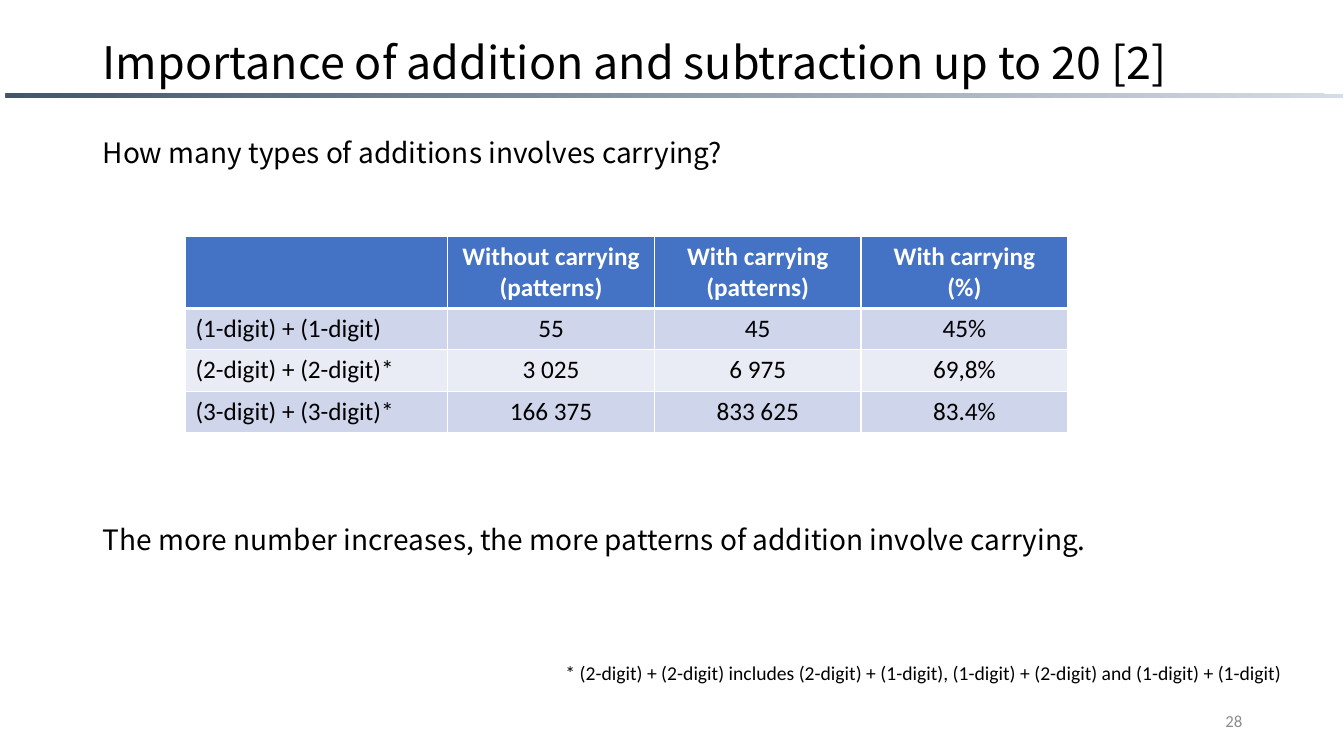
from dataclasses import dataclass

from lxml import etree
from pptx import Presentation
from pptx.dml.color import RGBColor
from pptx.enum.shapes import MSO_SHAPE
from pptx.enum.text import MSO_ANCHOR, MSO_AUTO_SIZE, PP_ALIGN
from pptx.oxml.ns import qn
from pptx.slide import Slide
from pptx.table import _Cell
from pptx.text.text import TextFrame
from pptx.util import Emu, Pt

RECTANGLE = MSO_SHAPE.RECTANGLE
LEFT, CENTER, RIGHT = PP_ALIGN.LEFT, PP_ALIGN.CENTER, PP_ALIGN.RIGHT
TOP, MIDDLE = MSO_ANCHOR.TOP, MSO_ANCHOR.MIDDLE
NO_AUTOFIT = MSO_AUTO_SIZE.NONE
EMU_PER_PX = 9144  # 100 px to the inch
TITLE_ONLY = 5


@dataclass(frozen=True)
class Theme:
    text: str = "000000"
    white: str = "FFFFFF"
    page_number: str = "8C8C8C"
    bar_light: str = "D6DCE5"
    bar_dark: str = "44546A"
    header: str = "4472C4"
    bands: tuple[str, str] = ("CFD5EA", "E9EBF5")
    heading_font: str = "Noto Sans CJK JP"
    table_font: str = "Calibri"
    title_size: int = 32
    body_size: int = 20
    table_size: int = 18
    note_size: int = 14
    number_size: int = 12


THEME = Theme()


@dataclass(frozen=True)
class Box:
    left: int
    top: int
    width: int
    height: int

    def emu(self) -> tuple[Emu, Emu, Emu, Emu]:
        return px(self.left), px(self.top), px(self.width), px(self.height)


@dataclass(frozen=True)
class TextBlock:
    box: Box
    text: str
    size: int
    font: str
    color: str = THEME.text
    align: PP_ALIGN = LEFT
    anchor: MSO_ANCHOR = TOP
    line_spacing: float = 1.5
    space_before: int = 10


TITLE = "Importance of addition and subtraction up to 20 [2]"
TITLE_BOX = Box(92, 40, 1150, 49)
BAR_BOX = Box(6, 93, 1326, 4)
TEXT_BLOCKS = (
    TextBlock(Box(92, 113, 1150, 60), "How many types of additions involves carrying?",
              THEME.body_size, THEME.heading_font),
    TextBlock(Box(92, 497, 1150, 60),
              "The more number increases, the more patterns of addition involve carrying.",
              THEME.body_size, THEME.heading_font),
    TextBlock(Box(551, 639, 739, 42),
              "* (2-digit) + (2-digit) includes (2-digit) + (1-digit), "
              "(1-digit) + (2-digit) and (1-digit) + (1-digit)",
              THEME.note_size, THEME.table_font),
    TextBlock(Box(942, 695, 300, 40), "28", THEME.number_size, THEME.table_font,
              THEME.page_number, RIGHT, MIDDLE, 1.0, 0),
)

TABLE_BOX = Box(184, 235, 874, 192)
COLUMN_WIDTHS = (260, 205, 205, 205)
ROW_HEIGHTS = (69, 41, 41, 41)
TABLE_ROWS = (
    ("", "Without carrying\n(patterns)", "With carrying\n(patterns)", "With carrying\n(%)"),
    ("(1-digit) + (1-digit)", "55", "45", "45%"),
    ("(2-digit) + (2-digit)*", "3 025", "6 975", "69,8%"),
    ("(3-digit) + (3-digit)*", "166 375", "833 625", "83.4%"),
)


def px(length: int) -> Emu:
    return Emu(length * EMU_PER_PX)


def rgb(color: str) -> RGBColor:
    return RGBColor.from_string(color)


def write_text(frame: TextFrame, text: str, *, size: int, font: str,
               color: str = THEME.text, align: PP_ALIGN = LEFT, bold: bool = False,
               line_spacing: float = 1.0, space_before: int = 0) -> None:
    """Fill the frame, one paragraph for each line of text."""
    frame.text = text
    for paragraph in frame.paragraphs:
        paragraph.alignment = align
        paragraph.line_spacing = line_spacing
        paragraph.space_before = Pt(space_before)
        for run in paragraph.runs:
            run.font.size = Pt(size)
            run.font.name = font
            run.font.bold = bold
            run.font.color.rgb = rgb(color)


def add_title(slide: Slide) -> None:
    title = slide.shapes.title
    title.left, title.top, title.width, title.height = TITLE_BOX.emu()
    frame = title.text_frame
    frame.auto_size = NO_AUTOFIT
    frame.vertical_anchor = MIDDLE
    write_text(frame, TITLE, size=THEME.title_size, font=THEME.heading_font,
               line_spacing=0.9)


def add_title_bar(slide: Slide) -> None:
    bar = slide.shapes.add_shape(RECTANGLE, *BAR_BOX.emu())
    bar.shadow.inherit = False
    bar.line.fill.background()
    bar.fill.gradient()
    bar.fill.gradient_angle = 230
    for stop, color in zip(bar.fill.gradient_stops, (THEME.bar_light, THEME.bar_dark)):
        stop.color.rgb = rgb(color)


def add_text_block(slide: Slide, block: TextBlock) -> None:
    frame = slide.shapes.add_textbox(*block.box.emu()).text_frame
    frame.word_wrap = True
    frame.vertical_anchor = block.anchor
    write_text(frame, block.text, size=block.size, font=block.font, color=block.color,
               align=block.align, line_spacing=block.line_spacing,
               space_before=block.space_before)


def set_borders(cell: _Cell, **widths: int) -> None:
    """Draw white borders, with widths in points by side (L, R, T, B)."""
    properties = cell._tc.get_or_add_tcPr()
    for side, width in widths.items():
        line = etree.SubElement(properties, qn(f"a:ln{side}"), w=str(Pt(width)))
        fill = etree.SubElement(line, qn("a:solidFill"))
        etree.SubElement(fill, qn("a:srgbClr"), val=THEME.white)


def add_carrying_table(slide: Slide) -> None:
    table = slide.shapes.add_table(len(TABLE_ROWS), len(COLUMN_WIDTHS),
                                   *TABLE_BOX.emu()).table
    for column, width in zip(table.columns, COLUMN_WIDTHS):
        column.width = px(width)
    for row, height in zip(table.rows, ROW_HEIGHTS):
        row.height = px(height)
    for row_index, texts in enumerate(TABLE_ROWS):
        is_header = row_index == 0
        fill = THEME.header if is_header else THEME.bands[(row_index - 1) % 2]
        for column_index, text in enumerate(texts):
            cell = table.cell(row_index, column_index)
            set_borders(cell, L=1, R=1, T=3 if row_index == 1 else 1,
                        B=3 if is_header else 1)
            cell.fill.solid()
            cell.fill.fore_color.rgb = rgb(fill)
            write_text(cell.text_frame, text, size=THEME.table_size,
                       font=THEME.table_font, bold=is_header,
                       color=THEME.white if is_header else THEME.text,
                       align=CENTER if column_index else LEFT)


def main() -> None:
    presentation = Presentation()
    presentation.slide_width, presentation.slide_height = px(1333), px(750)
    slide = presentation.slides.add_slide(presentation.slide_layouts[TITLE_ONLY])
    add_title_bar(slide)
    add_title(slide)
    add_carrying_table(slide)
    for block in TEXT_BLOCKS:
        add_text_block(slide, block)
    presentation.save("out.pptx")


if __name__ == "__main__":
    main()
